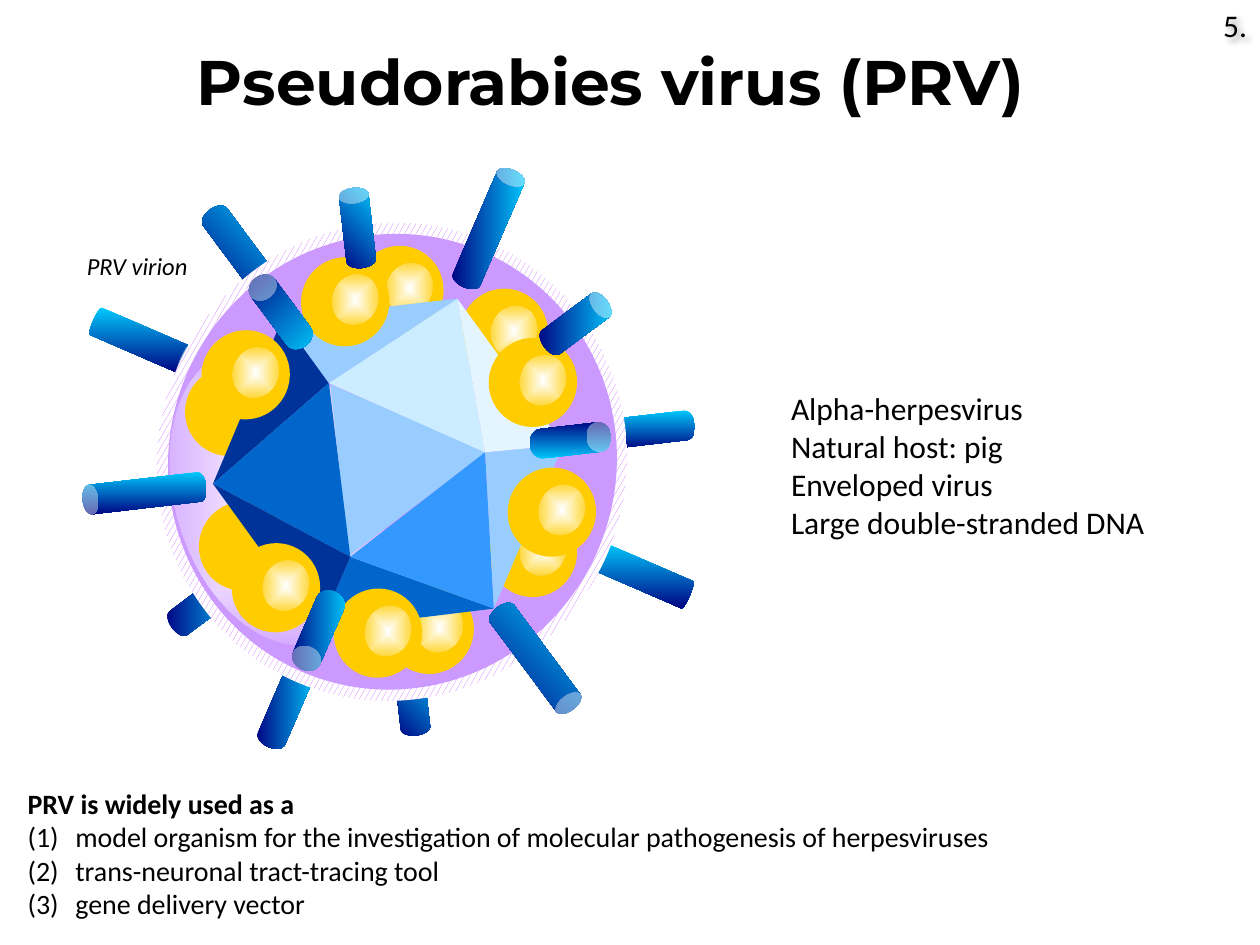
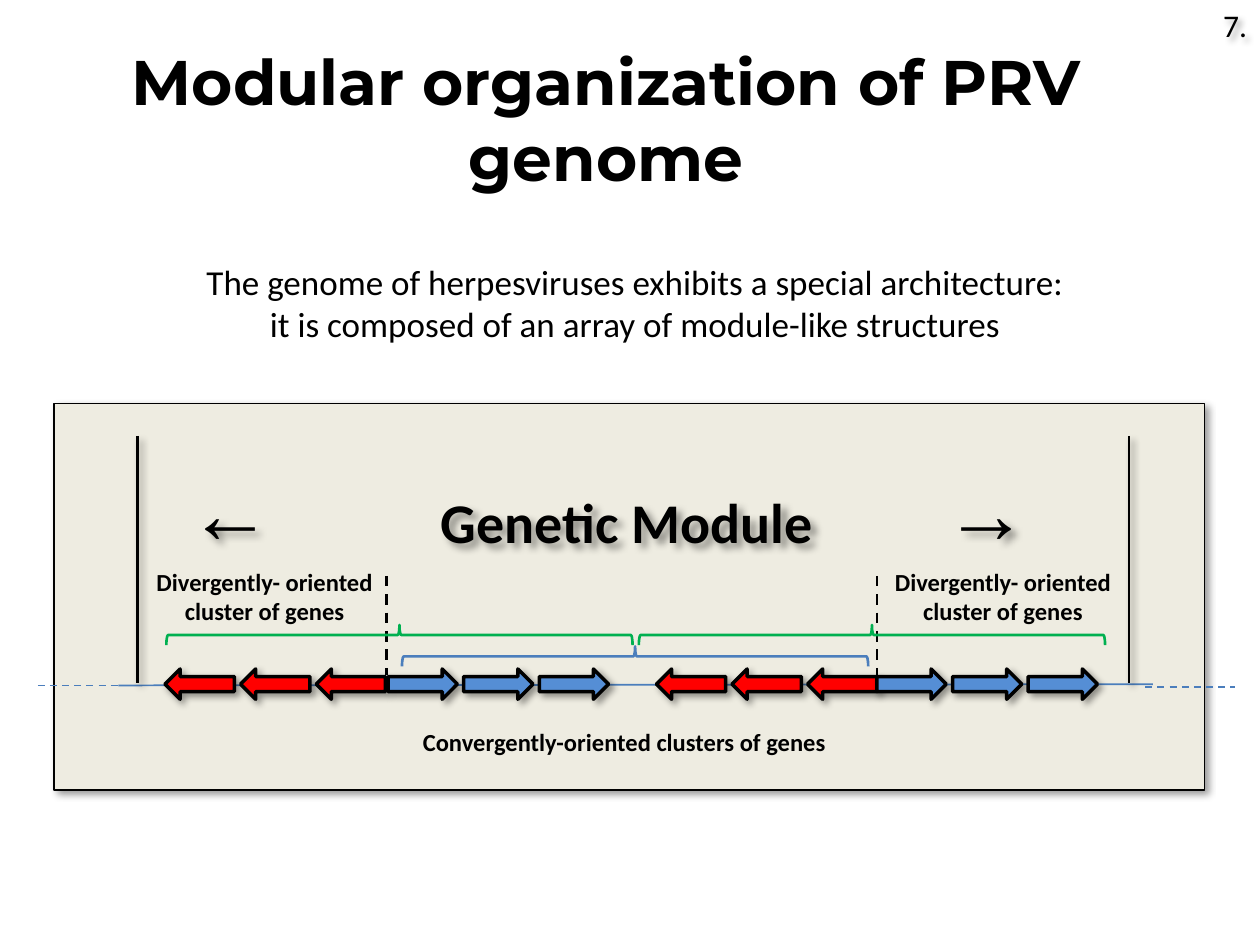
from dataclasses import dataclass

from lxml.etree import SubElement
from pptx import Presentation
from pptx.dml.color import RGBColor
from pptx.enum.dml import MSO_LINE, MSO_PATTERN
from pptx.enum.shapes import MSO_CONNECTOR, MSO_SHAPE
from pptx.enum.text import MSO_ANCHOR, MSO_AUTO_SIZE, PP_ALIGN
from pptx.oxml.ns import qn
from pptx.util import Inches, Pt

BLACK = RGBColor(0x00, 0x00, 0x00)
WHITE = RGBColor(0xFF, 0xFF, 0xFF)
NAVY = RGBColor(0x00, 0x00, 0x80)
CYAN = RGBColor(0x00, 0xCC, 0xFF)
VIOLET = RGBColor(0xCC, 0x66, 0xFF)
LILAC = RGBColor(0xCC, 0x99, 0xFF)
GOLD = RGBColor(0xFF, 0xCC, 0x00)
DEEP_BLUE = RGBColor(0x00, 0x33, 0x99)
MID_BLUE = RGBColor(0x00, 0x66, 0xCC)
BRIGHT_BLUE = RGBColor(0x33, 0x99, 0xFF)
SKY = RGBColor(0x99, 0xCC, 0xFF)
PALE_SKY = RGBColor(0xCC, 0xEC, 0xFF)
ICE = RGBColor(0xE5, 0xF5, 0xFF)
SAND = RGBColor(0xEE, 0xEC, 0xE1)
GENE_BLUE = RGBColor(0x55, 0x8E, 0xD5)
GENE_RED = RGBColor(0xFF, 0x00, 0x00)
STRAND_BLUE = RGBColor(0x4B, 0x7E, 0xBC)
GREEN = RGBColor(0x00, 0xB0, 0x50)

SLIDE_WIDTH, SLIDE_HEIGHT = Inches(10), Inches(7.5)
COLUMNS, ROWS = 100, 75
BODY_FONT, TITLE_FONT, ARROW_FONT = "Calibri", "Montserrat", "Arial"
VIRION_TILT = 23.4


@dataclass
class Gradient:
    """Two colours blended along an angle, or outwards from a focus."""
    start: RGBColor
    end: RGBColor
    angle: float = 0
    spread: str = ""
    focus: tuple = (50, 50, 50, 50)


@dataclass
class Hatch:
    """Confetti pattern in two colours."""
    front: RGBColor
    back: RGBColor


GLOW = Gradient(WHITE, GOLD, spread="shape")


def write_text(paragraph, text, size=18, font=BODY_FONT, bold=False, italic=False, color=BLACK):
    """Add one formatted run to a paragraph."""
    run = paragraph.add_run()
    run.text = text
    run.font.size = Pt(size)
    run.font.name = font
    run.font.bold = bold
    run.font.italic = italic
    run.font.color.rgb = color


def set_effects(item, shadow):
    """Replace the theme shadow by none or by the soft drop shadow."""
    properties = item.element.spPr
    effects = properties.find(qn("a:effectLst"))
    if effects is None:
        effects = SubElement(properties, qn("a:effectLst"))
    if shadow:
        drop = SubElement(effects, qn("a:outerShdw"), blurRad=str(Pt(4)), dist=str(Pt(3)),
                          dir="2700000", algn="tl", rotWithShape="0")
        color = SubElement(drop, qn("a:srgbClr"), val=str(BLACK))
        SubElement(color, qn("a:alpha"), val="40000")


def number_paragraph(paragraph):
    """Give a paragraph a hanging number in brackets."""
    properties = paragraph._p.get_or_add_pPr()
    properties.set("marL", str(Inches(0.38)))
    properties.set("indent", str(-Inches(0.38)))
    SubElement(properties, qn("a:buFont"), typeface="+mj-lt")
    SubElement(properties, qn("a:buAutoNum"), type="arabicParenBoth")


def set_tabs(paragraph, *stops):
    """Set left tab stops, in inches from the text edge."""
    tabs = SubElement(paragraph._p.get_or_add_pPr(), qn("a:tabLst"))
    for stop in stops:
        SubElement(tabs, qn("a:tab"), pos=str(Inches(stop)), algn="l")


class SlideWriter:
    """Holds the shared style and draws on the current slide."""

    def __init__(self, deck):
        self.deck = deck
        self.slide = None

    def place(self, x, y):
        """Turn columns and rows into slide lengths."""
        return round(x * SLIDE_WIDTH / COLUMNS), round(y * SLIDE_HEIGHT / ROWS)

    def frame(self, box):
        """Turn a box in columns and rows into left, top, width and height."""
        return *self.place(*box[:2]), *self.place(*box[2:])

    def start(self, title, title_box, number):
        """Open a slide with its title and page number."""
        self.slide = self.deck.slides.add_slide(self.deck.slide_layouts[5])
        heading = self.slide.shapes.title
        heading.left, heading.top, heading.width, heading.height = self.frame(title_box)
        text_frame = heading.text_frame
        text_frame.word_wrap = True
        text_frame.auto_size = MSO_AUTO_SIZE.NONE
        text_frame.vertical_anchor = MSO_ANCHOR.TOP
        text_frame.paragraphs[0].alignment = PP_ALIGN.CENTER
        write_text(text_frame.paragraphs[0], title, size=36, font=TITLE_FONT, bold=True)
        self.text((96.1, 0, 3.9, 4), [number], wrap=False, shadow=True)

    def text(self, box, lines, wrap=True, shadow=False, align=PP_ALIGN.LEFT, **style):
        """Add a text box with one paragraph a line."""
        holder = self.slide.shapes.add_textbox(*self.frame(box))
        set_effects(holder, shadow)
        text_frame = holder.text_frame
        text_frame.word_wrap = wrap
        for index, line in enumerate(lines):
            paragraph = text_frame.add_paragraph() if index else text_frame.paragraphs[0]
            paragraph.alignment = align
            if line:
                write_text(paragraph, line, **style)
        return text_frame

    def paint(self, shape, fill, line, width, shadow):
        """Set fill, outline and shadow of a shape."""
        if isinstance(fill, Gradient):
            self.blend(shape, fill)
        elif isinstance(fill, Hatch):
            shape.fill.patterned()
            shape.fill.pattern = MSO_PATTERN.LARGE_CONFETTI
            shape.fill.fore_color.rgb = fill.front
            shape.fill.back_color.rgb = fill.back
        elif fill is None:
            shape.fill.background()
        else:
            shape.fill.solid()
            shape.fill.fore_color.rgb = fill
        if line is None:
            shape.line.fill.background()
        else:
            shape.line.color.rgb = line
            shape.line.width = Pt(width)
        shape.shadow.inherit = False
        set_effects(shape, shadow)

    def blend(self, shape, gradient):
        """Fill a shape with a gradient that keeps its direction on the page."""
        shape.fill.gradient()
        for stop, color in zip(shape.fill.gradient_stops, (gradient.start, gradient.end)):
            stop.color.rgb = color
        shape.fill.gradient_angle = (360 - gradient.angle) % 360
        blend = shape.element.spPr.find(qn("a:gradFill"))
        blend.set("rotWithShape", "0")
        if gradient.spread:
            blend.remove(blend.find(qn("a:lin")))
            spread = SubElement(blend, qn("a:path"), {"path": gradient.spread})
            sides = {side: str(share * 1000) for side, share in zip("ltrb", gradient.focus)}
            SubElement(spread, qn("a:fillToRect"), sides)

    def shape(self, kind, box, fill=None, line=None, width=1, shadow=False, turn=0, flip="", adjust=None):
        """Add a preset shape, turned and flipped as asked."""
        shape = self.slide.shapes.add_shape(kind, *self.frame(box))
        shape.rotation = turn
        if flip:
            shape.element.spPr.xfrm.set(flip, "1")
        if adjust is not None:
            shape.adjustments[0] = adjust
        self.paint(shape, fill, line, width, shadow)

    def facet(self, corners, fill):
        """Add a closed polygon through its corners."""
        points = [self.place(*corner) for corner in corners]
        builder = self.slide.shapes.build_freeform(*points[0])
        builder.add_line_segments(points[1:], close=True)
        self.paint(builder.convert_to_shape(), fill, None, 0, False)

    def line(self, start, end, color, width, dashed=False, shadow=False):
        """Add a straight connector."""
        connector = self.slide.shapes.add_connector(
            MSO_CONNECTOR.STRAIGHT, *self.place(*start), *self.place(*end))
        connector.line.color.rgb = color
        connector.line.width = Pt(width)
        if dashed:
            connector.line.dash_style = MSO_LINE.DASH
        set_effects(connector, shadow)

    def spike(self, left, top, length, turn, angle, adjust, flip=""):
        """Add one surface spike of the virion."""
        colors = (CYAN, NAVY) if angle == 90 else (NAVY, CYAN)
        self.shape(MSO_SHAPE.CAN, (left, top, 2.35, length), Gradient(*colors, angle),
                   turn=turn, flip=flip, adjust=adjust)

    def protein(self, left, top, shiny=True):
        """Add one tegument protein with its highlight."""
        self.shape(MSO_SHAPE.OVAL, (left, top, 7, 7.1), GOLD, turn=VIRION_TILT)
        if shiny:
            self.shape(MSO_SHAPE.OVAL, (left + 2.5, top + 1.35, 3.6, 4.05), GLOW, turn=VIRION_TILT)


def draw_virion(page):
    """Draw the virion from its rear spikes to its front ones."""
    rear_spikes = [
        (49.9, 41.7, 8, 293.4, 90, 0.18), (9.9, 23, 8, 113.4, 90, 0.18),
        (31.5, 52, 6.4, 353.4, 315, 0.51), (15, 44.8, 6.3, 53.4, 0, 0.53),
        (50.3, 30.4, 7.4, 263.4, 90, 0.63), (17.7, 15.9, 7.5, 143.4, 315, 0.6),
        (21.6, 52, 7.6, 23.4, 0, 0.6)]
    front_spikes = [
        (24.1, 46.7, 6.7, 23.4, 0, 0.81, "flipV"), (44.1, 31.7, 6.5, 263.4, 90, 0.83, "flipV"),
        (21.1, 21.4, 6.7, 143.4, 315, 0.81, "flipV"), (37.6, 13.1, 10.1, 23.4, 0, 0.52),
        (10.3, 34.2, 9.9, 263.4, 90, 0.53), (41.3, 47.2, 10.1, 143.4, 315, 0.52),
        (27.2, 14.9, 6.4, 353.4, 315, 0.52), (44.5, 22.6, 6.2, 53.4, 0, 0.53)]
    rear_proteins = [(38.8, 40.3), (14.7, 29.1, False), (15.8, 39.8, False),
                     (30.6, 46.4), (28.2, 19.5), (36.5, 22.9)]
    front_proteins = [(40.3, 37.1), (16, 26.2), (38.8, 26.8), (23.9, 20.4), (18.4, 43.1), (26.5, 46.7)]
    top, upper_left, left = (36.3, 23.7), (26.1, 30.4), (16.9, 38.4)
    bottom, lower_right, right = (27.8, 44.2), (39.2, 48.3), (38.5, 35.9)
    far_left, far_bottom, far_right = (22.4, 25.3), (25.3, 50), (44.7, 35.3)
    facets = [
        ((bottom, lower_right, far_bottom), MID_BLUE), ((right, lower_right, bottom), BRIGHT_BLUE),
        ((upper_left, left, far_left), DEEP_BLUE), ((bottom, left, upper_left), MID_BLUE),
        ((bottom, left, far_bottom), DEEP_BLUE), ((upper_left, top, right), PALE_SKY),
        ((right, lower_right, far_right), SKY), ((upper_left, top, far_left), SKY),
        ((right, top, far_right), ICE)]

    for spike in rear_spikes:
        page.spike(*spike)
    page.shape(MSO_SHAPE.OVAL, (12.5, 17.6, 37.2, 38.1), Hatch(VIOLET, WHITE), turn=VIRION_TILT)
    page.shape(MSO_SHAPE.OVAL, (13.4, 18.5, 35.5, 36.3), LILAC, turn=VIRION_TILT)
    page.shape(MSO_SHAPE.OVAL, (13.9, 27.2, 16.1, 24.3), Gradient(WHITE, LILAC, spread="shape"), turn=343)
    page.shape(MSO_SHAPE.MOON, (34.9, 17, 9.7, 26.7),
               Gradient(VIOLET, LILAC, spread="rect", focus=(100, 0, 0, 100)), turn=147.2, adjust=0.35)
    for protein in rear_proteins:
        page.protein(*protein)
    page.shape(MSO_SHAPE.ISOSCELES_TRIANGLE, (23.3, 32.7, 13.5, 11.9), SKY, turn=VIRION_TILT, flip="flipV")
    for corners, color in facets:
        page.facet(corners, color)
    for protein in front_proteins:
        page.protein(*protein)
    for spike in front_spikes:
        page.spike(*spike)


def build_virus_slide(page):
    """Build the slide that introduces the virus."""
    page.start("Pseudorabies virus (PRV)", (6.7, 2.9, 83.5, 7.1), "5.")
    draw_virion(page)
    page.text((5.9, 19.4, 10.1, 3.4), ["PRV virion"], wrap=False, size=14, italic=True)
    page.text((61.8, 30.4, 32.3, 13.1), ["Alpha-herpesvirus", "Natural host: pig",
                                         "Enveloped virus", "Large double-stranded DNA"])
    uses = page.text((1.2, 61.9, 80.8, 11.8), ["PRV is widely used as a"], wrap=False, size=16, bold=True)
    for use in ("model organism for the investigation of molecular pathogenesis of herpesviruses",
                "trans-neuronal tract-tracing tool", "gene delivery vector"):
        paragraph = uses.add_paragraph()
        number_paragraph(paragraph)
        write_text(paragraph, use, size=16)


def build_genome_slide(page):
    """Build the slide about the modules of the genome."""
    page.start("Modular organization of PRV genome", (2.8, 2.9, 90.6, 13.1), "7.")
    centred = {"align": PP_ALIGN.CENTER}
    label = {"wrap": False, "size": 14, "bold": True, **centred}
    page.shape(MSO_SHAPE.RECTANGLE, (4.3, 32, 91.3, 30.7), SAND, BLACK, 0.75, shadow=True)
    page.line((9.4, 54.4), (91.5, 54.3), STRAND_BLUE, 1)
    for first, color, flip in ((13.1, GENE_RED, "flipH"), (30.8, GENE_BLUE, ""),
                               (52.1, GENE_RED, "flipH"), (69.6, GENE_BLUE, "")):
        for gene in range(3):
            page.shape(MSO_SHAPE.RIGHT_ARROW, (first + 6 * gene, 53.1, 5.5, 2.4),
                       color, BLACK, 2, shadow=True, flip=flip)
    for x, y in ((3, 54.4), (90.9, 54.5)):
        page.line((x, y), (x + 7.1, y), STRAND_BLUE, 1, dashed=True)
    for module_edge in (10.9, 89.6):
        page.line((module_edge, 34.6), (module_edge, 54.2), BLACK, 1.5, shadow=True)
    for cluster_edge in (30.7, 69.6):
        page.line((cluster_edge, 45.7), (cluster_edge, 53.6), BLACK, 1.5, dashed=True)

    module = page.text((14, 36, 69.3, 9.1), [""], shadow=True).paragraphs[0]
    set_tabs(module, 2, 6)
    write_text(module, "←", size=48, font=ARROW_FONT, bold=True)
    write_text(module, "\tGenetic Module\t", size=32, bold=True)
    write_text(module, "→", size=48, font=ARROW_FONT, bold=True)

    page.text((32.2, 57.2, 34.7, 3.4), ["Convergently-oriented clusters of genes"], **label)
    for left in (11.1, 69.7):
        page.text((left, 44.5, 19.8, 5.7), ["Divergently- oriented", "cluster of genes"], **label)
    for left, top, color in ((49.6, 33.6, STRAND_BLUE), (68.4, 31.9, GREEN), (30.9, 31.9, GREEN)):
        page.shape(MSO_SHAPE.LEFT_BRACE, (left, top, 1.6, 37), line=color, width=1.5, turn=90)
    page.text((13, 20.2, 74.8, 7.7), ["The genome of herpesviruses exhibits a special architecture:",
                                      "it is composed of an array of module-like structures"],
              size=20, **centred)


def main():
    """Build and save the deck."""
    deck = Presentation()
    deck.slide_width, deck.slide_height = SLIDE_WIDTH, SLIDE_HEIGHT
    page = SlideWriter(deck)
    build_virus_slide(page)
    build_genome_slide(page)
    deck.save("out.pptx")


if __name__ == "__main__":
    main()
